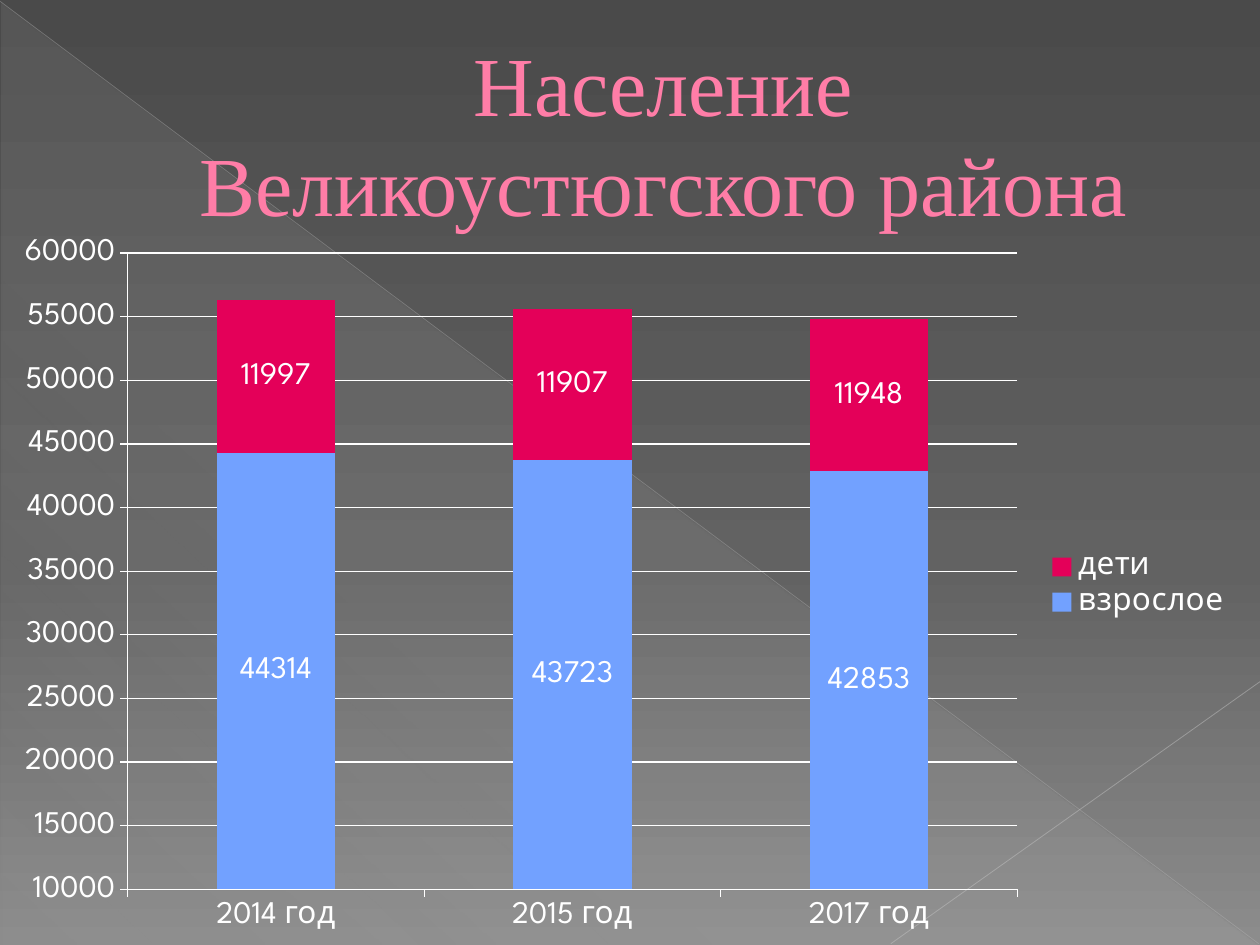
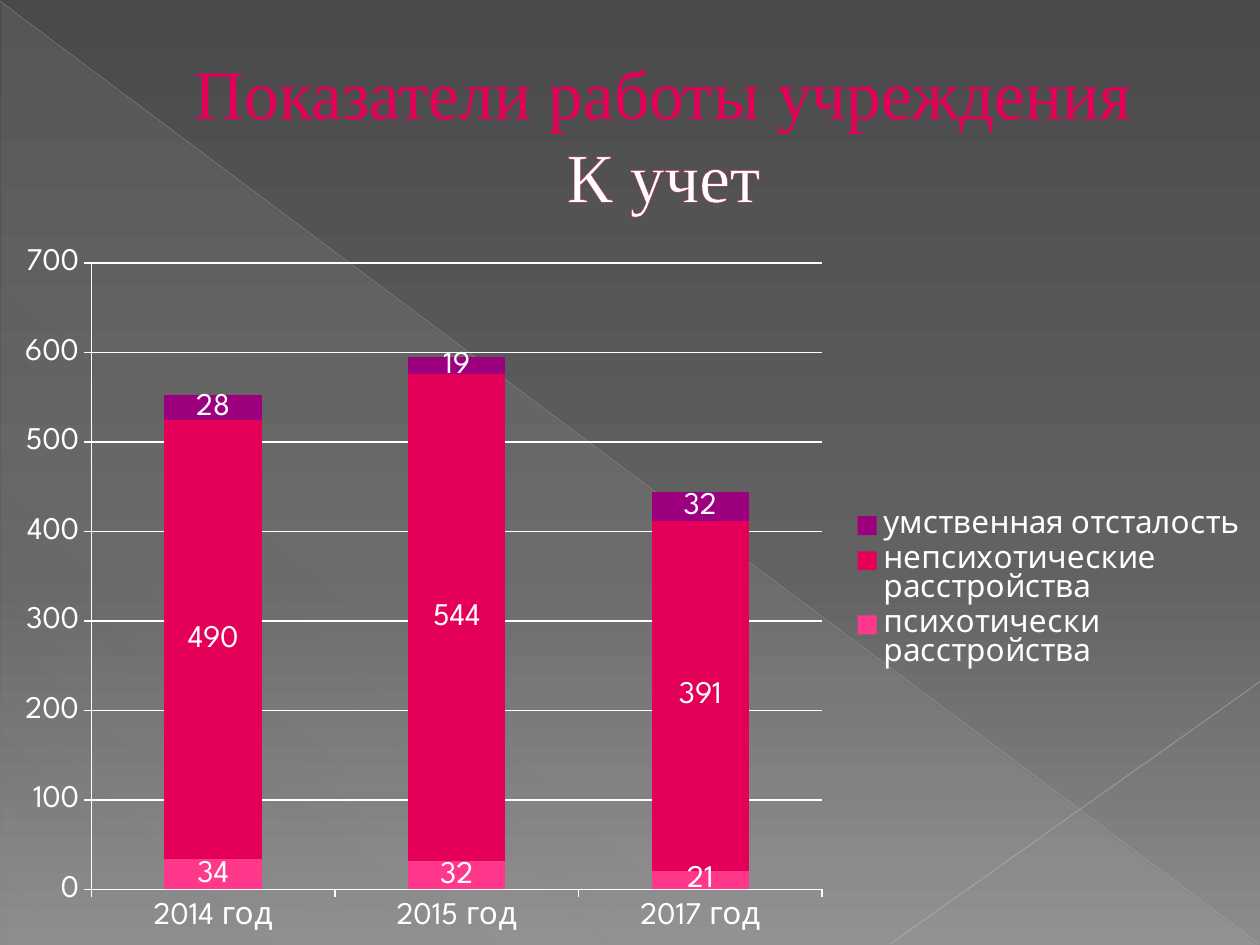
from copy import deepcopy

from pptx import Presentation
from pptx.chart.data import CategoryChartData
from pptx.dml.color import RGBColor
from pptx.enum.chart import XL_CHART_TYPE, XL_LEGEND_POSITION, XL_TICK_MARK
from pptx.enum.shapes import MSO_CONNECTOR, MSO_SHAPE
from pptx.enum.text import MSO_ANCHOR, MSO_AUTO_SIZE, PP_ALIGN
from pptx.oxml import parse_xml
from pptx.oxml.ns import nsdecls, qn
from pptx.util import Inches, Pt

STACKED = XL_CHART_TYPE.COLUMN_STACKED
STRAIGHT = MSO_CONNECTOR.STRAIGHT
TICK_OUT, TICK_NONE = XL_TICK_MARK.OUTSIDE, XL_TICK_MARK.NONE

WHITE = RGBColor(0xFF, 0xFF, 0xFF)
ROSE = RGBColor(0xFF, 0x7D, 0xA7)
CRIMSON = RGBColor(0xE4, 0x00, 0x59)
PINK = RGBColor(0xFF, 0x38, 0x8C)
PURPLE = RGBColor(0x9C, 0x00, 0x7F)
BLUE = RGBColor(0x72, 0xA1, 0xFF)
OUTLINE = RGBColor(0xB1, 0x27, 0x61)
LINE_GREY = RGBColor(0xBF, 0xBF, 0xBF)
LINE_LIGHT = RGBColor(0xC6, 0xC6, 0xC6)
TITLE_FONT, CHART_FONT = "Times New Roman", "League Spartan"
WIDTH, HEIGHT = 10, 7.5

# Content
YEARS = ["2014 год", "2015 год", "2017 год"]
SLIDES = [
    {
        "title": [("Население Великоустюгского района", ROSE)],
        "size": 48,
        "chart_top": 1.78, "chart_width": 9.88,
        "scale": (10000, 60000, 5000),
        "series": [("взрослое", BLUE, (44314, 43723, 42853)),
                   ("дети", CRIMSON, (11997, 11907, 11948))],
    },
    {
        "title": [("Показатели работы учреждения", CRIMSON), ("К учет", WHITE)],
        "size": 39.6,
        "chart_top": 1.86, "chart_width": WIDTH,
        "scale": (0, 700, 100),
        "series": [("психотически расстройства", PINK, (34, 32, 21)),
                   ("непсихотические расстройства", CRIMSON, (490, 544, 391)),
                   ("умственная отсталость", PURPLE, (28, 19, 32))],
    },
]
# Gradient stops: position %, colour, opacity %
BACKGROUND = [(0, "4A4A4A", 100), (60, "626262", 100), (100, "8C8C8C", 100)]
SHEEN = [(0, "D2D2D2", 10), (70, "D2D2D2", 8), (100, "D2D2D2", 1)]
# Lines: from, to, colour, width, opacity %
RAYS = [((0, 0.01), (9.99, 7.49), LINE_GREY, 0.39, 35),
        ((WIDTH, 5.41), (7.07, 7.49), LINE_LIGHT, 0.47, 45)]


def set_gradient(fill, element, stops, angle):
    fill.gradient()
    grad = element.find(".//" + qn("a:gradFill"))
    for child in list(grad):
        grad.remove(child)
    items = "".join(
        f'<a:gs pos="{pos * 1000}"><a:srgbClr val="{color}">'
        f'<a:alpha val="{alpha * 1000}"/></a:srgbClr></a:gs>'
        for pos, color, alpha in stops)
    grad.append(parse_xml(f'<a:gsLst {nsdecls("a")}>{items}</a:gsLst>'))
    grad.append(parse_xml(
        f'<a:lin {nsdecls("a")} ang="{angle * 60000}" scaled="0"/>'))


def decorate_master(master, s):
    """Draw the shared backdrop, then move it behind the master's placeholders."""
    set_gradient(master.background.fill, master.element, BACKGROUND, 90)
    sheen = s.shapes.add_shape(MSO_SHAPE.RIGHT_TRIANGLE, Inches(0.01), Inches(0.02),
                               Inches(9.98), Inches(7.48))
    sheen.shadow.inherit = False
    sheen.line.fill.background()
    set_gradient(sheen.fill, sheen.element, SHEEN, 133)
    parts = [sheen]
    for start, end, color, width, alpha in RAYS:
        ray = s.shapes.add_connector(STRAIGHT, *map(Inches, start + end))
        ray.line.color.rgb = color
        ray.line.width = Pt(width)
        ray.element.find(".//" + qn("a:srgbClr")).append(
            parse_xml(f'<a:alpha {nsdecls("a")} val="{alpha * 1000}"/>'))
        ray.element.spPr.append(parse_xml(f'<a:effectLst {nsdecls("a")}/>'))
        parts.append(ray)
    for i, part in enumerate(parts):
        master.shapes.element.insert(2 + i, part.element)


def write_title(s, lines, size):
    title = s.shapes.title
    title.left, title.top, title.width, title.height = map(Inches, (0.5, 0.29, 9, 1.53))
    tf = title.text_frame
    tf.auto_size = MSO_AUTO_SIZE.NONE
    tf.vertical_anchor = MSO_ANCHOR.MIDDLE
    p = tf.paragraphs[0]
    p.text = "\v".join(text for text, _ in lines)
    p.alignment = PP_ALIGN.CENTER
    pPr = p._p.get_or_add_pPr()
    pPr.set("marL", str(Inches(0.53)))
    pPr.set("indent", "0")
    for r, (_, color) in zip(p.runs, lines):
        r.font.size, r.font.name = Pt(size), TITLE_FONT
        r.font.color.rgb = color
        r._r.get_or_add_rPr().insert(0, parse_xml(
            f'<a:ln {nsdecls("a")} w="{Pt(0.5)}"><a:solidFill>'
            f'<a:srgbClr val="{OUTLINE}"/></a:solidFill></a:ln>'))
    # Line breaks take the size of the text around them
    for br in p._p.findall(qn("a:br")):
        br.append(deepcopy(p.runs[0]._r.rPr))


def white_line(line):
    line.color.rgb = WHITE
    line.width = Pt(0.75)


def add_stacked_chart(s, top, width, scale, series):
    data = CategoryChartData()
    data.categories = YEARS
    for name, _, values in series:
        data.add_series(name, values)
    chart = s.shapes.add_chart(STACKED, 0, Inches(top), Inches(width),
                               Inches(HEIGHT - top), data).chart
    chart.has_title = False
    chart.font.size, chart.font.name = Pt(18), CHART_FONT
    chart.font.color.rgb = WHITE
    chart.has_legend = True
    chart.legend.position = XL_LEGEND_POSITION.RIGHT
    chart.legend.include_in_layout = False

    # Axes
    for axis in (chart.category_axis, chart.value_axis):
        axis.major_tick_mark, axis.minor_tick_mark = TICK_OUT, TICK_NONE
        white_line(axis.format.line)
    axis = chart.value_axis
    axis.minimum_scale, axis.maximum_scale, axis.major_unit = scale
    axis.has_major_gridlines = True
    white_line(axis.major_gridlines.format.line)

    # Columns and their values
    plot = chart.plots[0]
    plot.gap_width, plot.overlap = 150, 100
    plot.vary_by_categories = False
    plot.has_data_labels = True
    plot.data_labels.show_value = True
    for column, (_, color, _) in zip(plot.series, series):
        column.format.fill.solid()
        column.format.fill.fore_color.rgb = color


def main():
    prs = Presentation()
    prs.slide_width, prs.slide_height = Inches(WIDTH), Inches(HEIGHT)
    title_only = prs.slide_layouts[5]
    for i, page in enumerate(SLIDES):
        s = prs.slides.add_slide(title_only)
        if i == 0:
            decorate_master(prs.slide_master, s)
        write_title(s, page["title"], page["size"])
        add_stacked_chart(s, page["chart_top"], page["chart_width"],
                          page["scale"], page["series"])
    prs.save("out.pptx")


if __name__ == "__main__":
    main()
